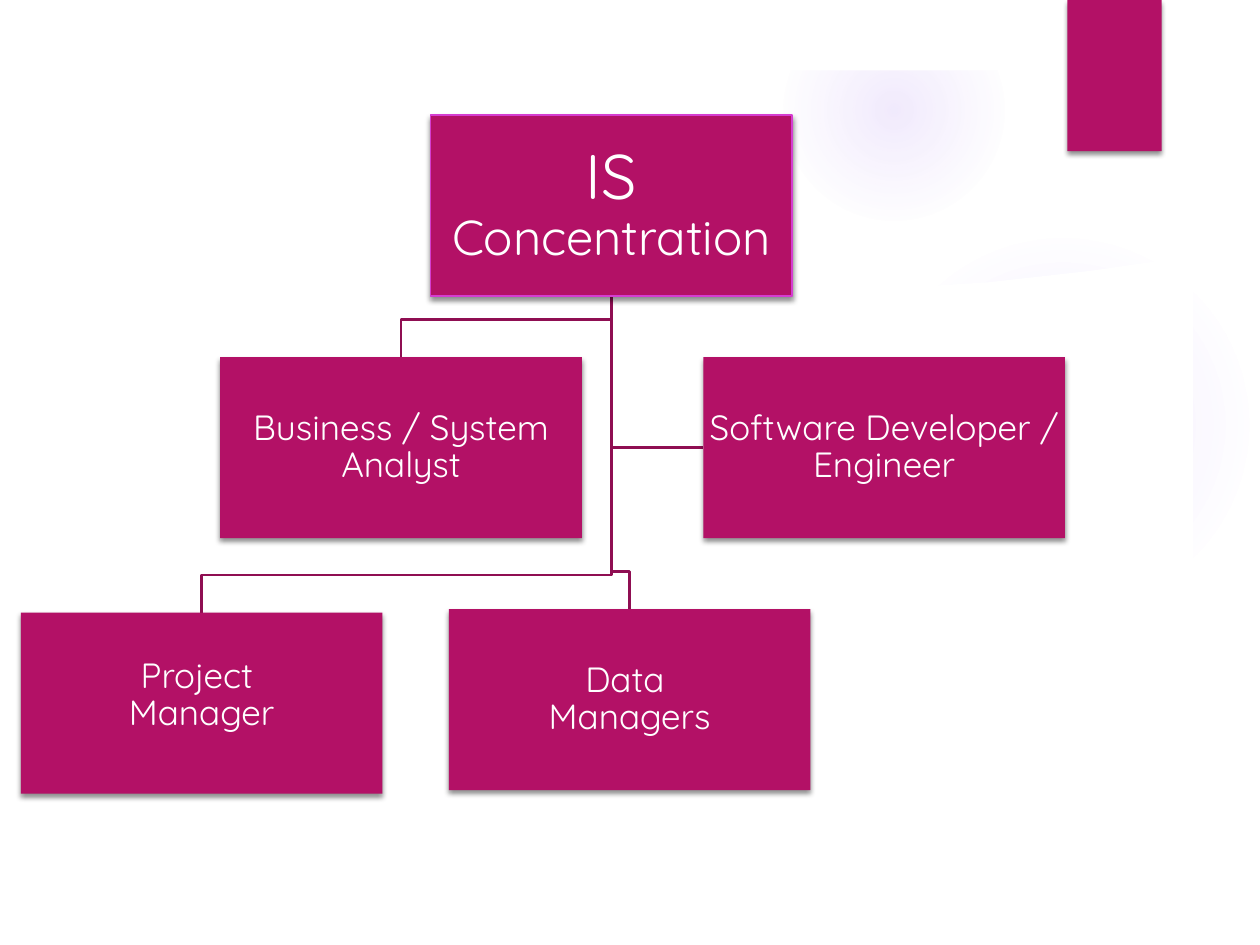
from lxml import etree
from pptx import Presentation
from pptx import util as u
from pptx.dml.color import RGBColor
from pptx.enum import shapes, text
from pptx.oxml import parse_xml
from pptx.oxml.ns import nsdecls, qn

MAGENTA = RGBColor(0xB3, 0x11, 0x66)
PLUM = RGBColor(0x8F, 0x0E, 0x52)
ORCHID = RGBColor(0xD5, 0x3D, 0xD0)
VIOLET = RGBColor(0x9B, 0x6B, 0xF2)
WHITE = RGBColor(0xFF, 0xFF, 0xFF)

BOX_WIDTH, BOX_HEIGHT = 7.29, 3.65
ROOT_LEFT, ROOT_TOP = 8.68, 2.32
STEM_X = ROOT_LEFT + BOX_WIDTH / 2
STEM_Y = ROOT_TOP + BOX_HEIGHT
DROP = 0.76


class ChartSlide:
    font = "Quicksand"

    def __init__(self, slide):
        self.slide = slide

    def block(self, left, top, width, height, fill=MAGENTA, outline=None, shadow=True):
        shape = self.slide.shapes.add_shape(
            shapes.MSO_SHAPE.RECTANGLE, u.Cm(left), u.Cm(top), u.Cm(width), u.Cm(height)
        )
        shape.shadow.inherit = False
        shape.fill.solid()
        shape.fill.fore_color.rgb = fill
        if outline is None:
            shape.line.fill.background()
        else:
            shape.line.color.rgb = outline
            shape.line.width = u.Pt(0.75)
        if shadow:
            effects = shape._element.spPr.find(qn("a:effectLst"))
            outer = etree.SubElement(
                effects, qn("a:outerShdw"), blurRad=str(u.Pt(3)), dist=str(u.Pt(2)),
                dir="5400000", algn="ctr", rotWithShape="0",
            )
            color = etree.SubElement(outer, qn("a:srgbClr"), val="000000")
            etree.SubElement(color, qn("a:alpha"), val="45000")
        return shape

    def box(self, left, top, runs, outline=None, inset=0.03, lift=0):
        shape = self.block(left, top, BOX_WIDTH, BOX_HEIGHT, outline=outline)
        frame = shape.text_frame
        frame.word_wrap = True
        frame.vertical_anchor = text.MSO_ANCHOR.MIDDLE
        frame.margin_left = frame.margin_right = frame.margin_top = u.Cm(inset)
        frame.margin_bottom = u.Cm(inset + lift)
        paragraph = frame.paragraphs[0]
        paragraph.alignment = text.PP_ALIGN.CENTER
        paragraph.line_spacing = 0.9
        for words, size in runs:
            for index, line in enumerate(words.split("\n")):
                if index:
                    paragraph.add_line_break()
                run = paragraph.add_run()
                run.text = line
                run.font.name = self.font
                run.font.size = u.Pt(size)
                run.font.color.rgb = WHITE

    def outline(self, points, closed=False):
        corners = [(u.Cm(x), u.Cm(y)) for x, y in points]
        builder = self.slide.shapes.build_freeform(*corners[0], scale=1.0)
        builder.add_line_segments(corners[1:], close=closed)
        shape = builder.convert_to_shape()
        shape.shadow.inherit = False
        return shape

    def area(self, points, fill):
        shape = self.outline(points, closed=True)
        shape.fill.solid()
        shape.fill.fore_color.rgb = fill
        shape.line.fill.background()

    def link(self, points):
        shape = self.outline(points)
        shape.fill.background()
        shape.line.color.rgb = PLUM
        shape.line.width = u.Pt(1.5)

    def glow(self, left, top, size, stops):
        shape = self.slide.shapes.add_shape(
            shapes.MSO_SHAPE.OVAL, u.Cm(left), u.Cm(top), u.Cm(size), u.Cm(size)
        )
        shape.shadow.inherit = False
        shape.line.fill.background()
        marks = "".join(
            f'<a:gs pos="{place * 1000}"><a:srgbClr val="{VIOLET}">'
            f'<a:alpha val="{alpha * 1000}"/></a:srgbClr></a:gs>'
            for place, alpha in stops
        )
        gradient = parse_xml(
            f'<a:gradFill {nsdecls("a")}><a:gsLst>{marks}</a:gsLst><a:path path="circle">'
            '<a:fillToRect l="50000" t="50000" r="50000" b="50000"/></a:path></a:gradFill>'
        )
        shape._element.spPr.find(qn("a:prstGeom")).addnext(gradient)


def main():
    presentation = Presentation()
    presentation.slide_width = u.Cm(25.4)
    presentation.slide_height = u.Cm(19.05)
    chart = ChartSlide(presentation.slides.add_slide(presentation.slide_layouts[6]))

    chart.glow(17.5, 4.65, 7.82, [(0, 7), (36, 6), (69, 0)])
    chart.glow(15.8, 0, 4.45, [(0, 14), (36, 7), (73, 0)])
    page_edge = [
        (1.35, 5.16), (4.39, 5.51), (7.04, 5.74), (9.42, 5.88), (12.04, 5.94),
        (14.91, 5.92), (17.88, 5.82), (19.94, 5.69), (21.99, 5.46), (24.05, 5.16),
    ]
    chart.area(page_edge + [(24.05, 17.75), (1.35, 17.75)], WHITE)
    chart.block(0, 0, 25.4, 1.42, fill=WHITE, shadow=False)
    chart.block(21.52, 0, 1.9, 3.05)

    developer = (14.18, 7.2, "Software Developer / Engineer", 0)
    hanging = [
        (9.05, 12.28, "Data \nManagers", 0),
        (4.44, 7.2, "Business / System Analyst", 0),
        (0.42, 12.35, "Project \nManager", 0.3),
    ]

    side_y = developer[1] + BOX_HEIGHT / 2
    chart.link([(STEM_X, STEM_Y), (STEM_X, side_y), (developer[0], side_y)])
    for left, top, _, _ in hanging:
        center = left + BOX_WIDTH / 2
        chart.link([
            (STEM_X, STEM_Y), (STEM_X, top - DROP), (center, top - DROP), (center, top)
        ])

    chart.box(ROOT_LEFT, ROOT_TOP, [("IS ", 36), ("Concentration", 28)], ORCHID, 0.08)
    for left, top, words, lift in hanging + [developer]:
        chart.box(left, top, [(words, 20)], lift=lift)

    presentation.save("out.pptx")


if __name__ == "__main__":
    main()
